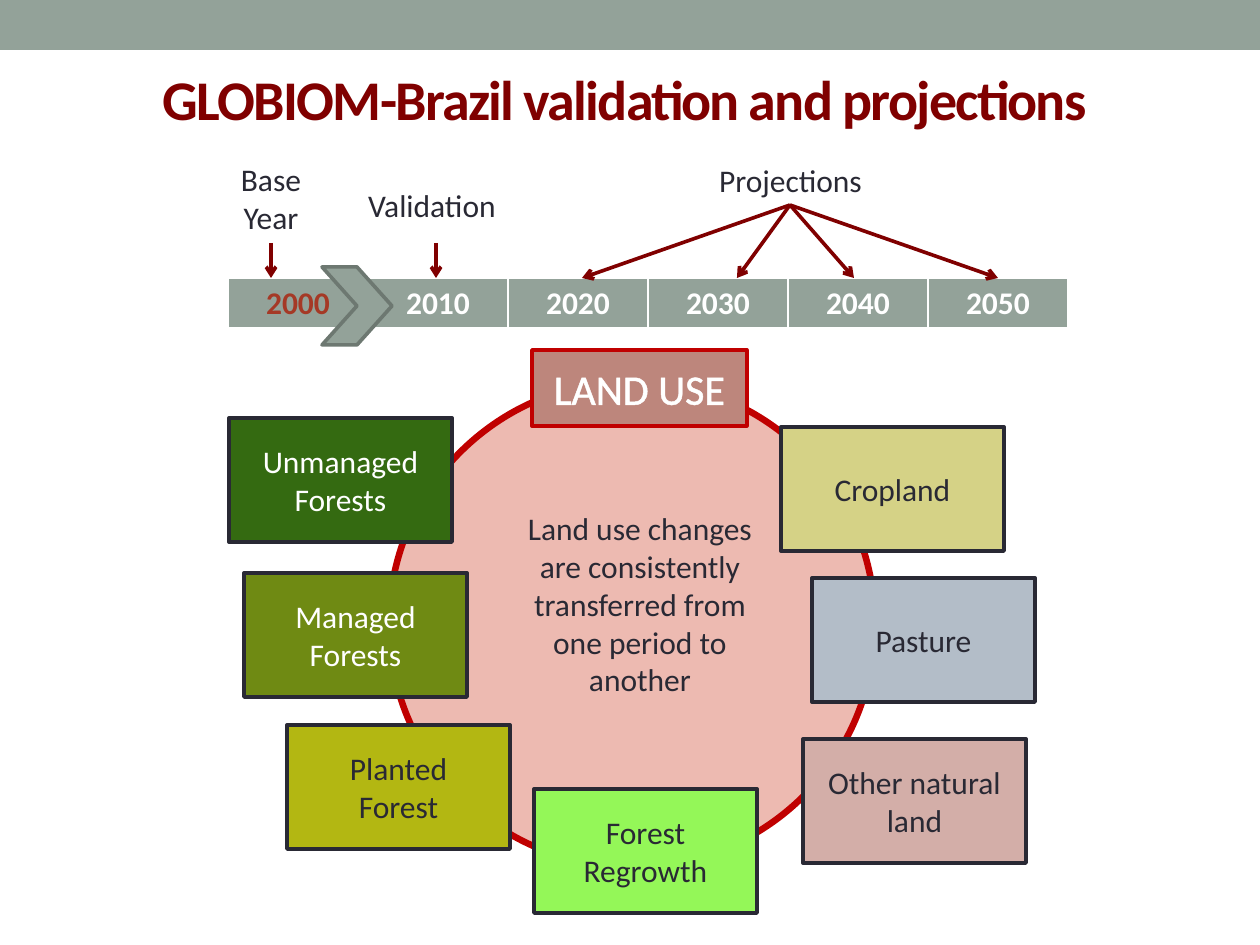
from dataclasses import dataclass

import lxml.etree
import pptx
import pptx.dml.color
import pptx.enum.shapes
import pptx.enum.text
import pptx.oxml
import pptx.oxml.ns
import pptx.util

EMU_PER_PX = 914400 / 126
SHAPES = pptx.enum.shapes.MSO_SHAPE
ANCHOR = pptx.enum.text.MSO_ANCHOR


@dataclass(frozen=True)
class Theme:
    font: str = "Calibri"
    title_size: int = 32
    heading_size: int = 24
    body_size: int = 18
    ink: str = "292934"
    white: str = "FFFFFF"
    maroon: str = "800000"
    sage: str = "93A299"
    sage_edge: str = "6D7871"
    base_year: str = "A53926"
    ring: str = "C00000"
    disc: str = "EDBAB1"
    heading_fill: str = "BD867C"


THEME = Theme()


def px(length):
    return pptx.util.Emu(round(length * EMU_PER_PX))


def rgb(value):
    return pptx.dml.color.RGBColor.from_string(value)


def add_xml(parent, tag, **attributes):
    return lxml.etree.SubElement(parent, pptx.oxml.ns.qn(tag), attributes)


def write(frame, text, color=THEME.ink, size=THEME.body_size, bold=False):
    """Fill a text frame with centred paragraphs, one per line of text."""
    frame.text = text
    for paragraph in frame.paragraphs:
        paragraph.alignment = pptx.enum.text.PP_ALIGN.CENTER
        paragraph.font.name = THEME.font
        paragraph.font.size = pptx.util.Pt(size)
        paragraph.font.bold = bold
        paragraph.font.color.rgb = rgb(color)


def add_figure(slide, preset, box, fill, edge=None, weight=0):
    figure = slide.shapes.add_shape(preset, *map(px, box))
    figure.shadow.inherit = False
    figure.fill.solid()
    figure.fill.fore_color.rgb = rgb(fill)
    if edge:
        figure.line.color.rgb = rgb(edge)
        figure.line.width = pptx.util.Pt(weight)
    else:
        figure.line.fill.background()
    return figure


def add_label(slide, box, text, wrap=True, anchor=ANCHOR.TOP, **style):
    label = slide.shapes.add_textbox(*map(px, box))
    label.text_frame.word_wrap = wrap
    label.text_frame.vertical_anchor = anchor
    write(label.text_frame, text, **style)
    return label


def add_arrow(slide, start, end):
    arrow = slide.shapes.add_connector(
        pptx.enum.shapes.MSO_CONNECTOR.STRAIGHT, *map(px, start + end))
    arrow.line.color.rgb = rgb(THEME.maroon)
    arrow.line.width = pptx.util.Pt(2.08)
    add_xml(arrow.line._get_or_add_ln(), "a:tailEnd", type="arrow")
    add_xml(arrow._element.spPr, "a:effectLst")


def add_cell_borders(cell):
    properties = cell._tc.get_or_add_tcPr()
    weights = {"a:lnL": 1, "a:lnR": 1, "a:lnT": 1, "a:lnB": 3}
    for position, (tag, weight) in enumerate(weights.items()):
        border = add_xml(properties, tag, w=str(pptx.util.Pt(weight)))
        add_xml(add_xml(border, "a:solidFill"), "a:srgbClr", val=THEME.white)
        properties.insert(position, border)


def add_timeline(slide, box, years):
    timeline = slide.shapes.add_table(1, len(years), *map(px, box)).table
    for cell, year in zip(timeline.rows[0].cells, years):
        cell.fill.solid()
        cell.fill.fore_color.rgb = rgb(THEME.sage)
        add_cell_borders(cell)
        color = THEME.base_year if year == years[0] else THEME.white
        write(cell.text_frame, str(year), color, bold=True)


def add_land_use_heading(slide):
    heading = add_figure(slide, SHAPES.RECTANGLE, (532, 350, 215, 76),
                         THEME.heading_fill, THEME.ring, 2)
    write(heading.text_frame, "LAND USE", THEME.white, THEME.heading_size)
    # White outline around the letters
    run_properties = heading.text_frame.paragraphs[0].runs[0]._r.get_or_add_rPr()
    outline = add_xml(run_properties, "a:ln", w=str(pptx.util.Pt(1.45)))
    add_xml(add_xml(outline, "a:solidFill"), "a:srgbClr", val=THEME.white)


def add_land_class(slide, left, top, name, fill, color=THEME.ink):
    land_class = add_figure(slide, SHAPES.RECTANGLE, (left, top, 223, 124),
                            fill, THEME.ink, 2.25)
    land_class.text_frame.word_wrap = True
    write(land_class.text_frame, name, color)


def main():
    deck = pptx.Presentation()
    deck.slide_width, deck.slide_height = px(1260), px(945)
    slide = deck.slides.add_slide(deck.slide_layouts[6])

    # Top band and land use cycle
    add_figure(slide, SHAPES.RECTANGLE, (0, 0, 1260, 50), THEME.sage)
    add_figure(slide, SHAPES.OVAL, (389, 381, 486, 486),
               THEME.disc, THEME.ring, 3.75)
    add_land_use_heading(slide)
    add_label(slide, (513, 503, 254, 279),
              "Land use changes are consistently transferred from one period "
              "to another")

    # Timeline with the step from base year to validation
    timeline_top = 278
    add_timeline(slide, (228, timeline_top, 840, 51), range(2000, 2051, 10))
    add_figure(slide, SHAPES.CHEVRON, (322, 267, 70, 78),
               THEME.sage, THEME.sage_edge, 2.08)

    # Phase labels and their arrows
    add_label(slide, (354, 180, 156, 50), "Validation", wrap=False)
    add_label(slide, (228, 154, 86, 89), "Base\nYear", wrap=False)
    add_label(slide, (529, 155, 523, 50), "Projections")
    for x in (271, 436):
        add_arrow(slide, (x, 243), (x, timeline_top))
    for x in (582, 737, 854, 998):
        add_arrow(slide, (790, 205), (x, timeline_top))

    # Title
    title = add_label(slide, (0, 30, 1260, 136),
                      "GLOBIOM-Brazil validation and projections ",
                      anchor=ANCHOR.MIDDLE, color=THEME.maroon,
                      size=THEME.title_size, bold=True)
    title_run = title.text_frame.paragraphs[0].runs[0]
    title_run._r.get_or_add_rPr().set("spc", "-100")

    # Land classes around the cycle
    for land_class in (
        (229, 418, "Unmanaged Forests", "346A11", THEME.white),
        (244, 573, "Managed Forests", "6F8A13", THEME.white),
        (287, 725, "Planted\nForest", "B3B712"),
        (534, 789, "Forest Regrowth", "94F758"),
        (781, 427, "Cropland", "D5D286"),
        (812, 578, "Pasture", "B3BDC8"),
        (803, 739, "Other natural\nland", "D3AEA8"),
    ):
        add_land_class(slide, *land_class)

    deck.save("out.pptx")


if __name__ == "__main__":
    main()
